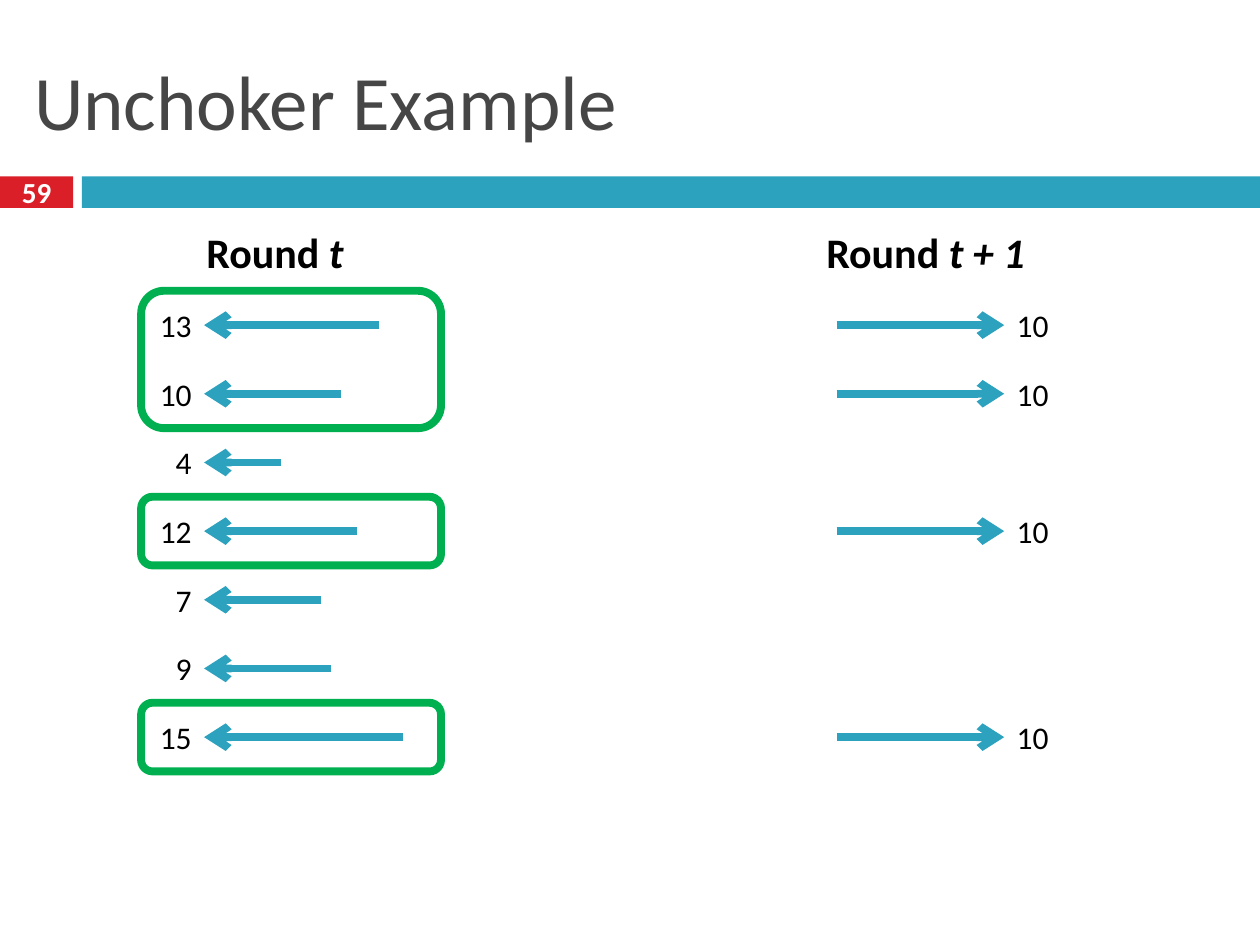
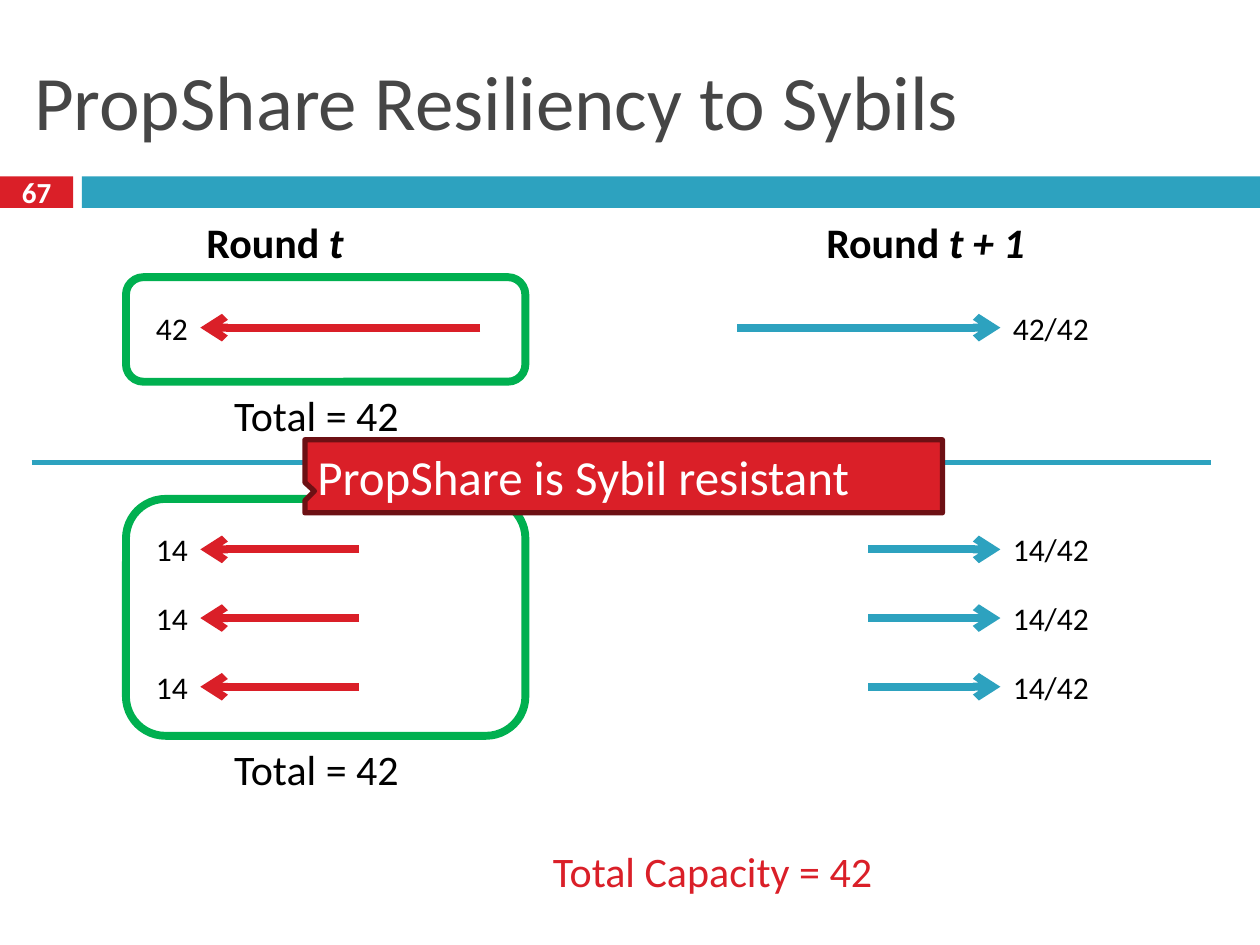
from typing import NamedTuple

from pptx import Presentation, util as u
from pptx.dml.color import RGBColor
from pptx.enum import shapes, text
from pptx.oxml.ns import qn
from lxml import etree

COLUMNS, ROWS = 100, 75
SLIDE_WIDTH, SLIDE_HEIGHT = u.Inches(10), u.Inches(7.5)
CELL = SLIDE_WIDTH // COLUMNS

TEAL = RGBColor(0x2D, 0xA2, 0xBF)
RED = RGBColor(0xDA, 0x1F, 0x28)
DARK_RED = RGBColor(0x6D, 0x10, 0x14)
GREEN = RGBColor(0x00, 0xB0, 0x50)
GREY = RGBColor(0x46, 0x46, 0x46)
BLACK = RGBColor(0, 0, 0)
WHITE = RGBColor(0xFF, 0xFF, 0xFF)

TITLE = dict(size=u.Pt(44), color=GREY)
NUMBER = dict(size=u.Pt(16.6), color=WHITE, bold=True)
HEADING = dict(size=u.Pt(24), color=BLACK, bold=True)
VARIABLE = dict(HEADING, italic=True)
SUM = dict(size=u.Pt(24), color=BLACK)
CAPACITY = dict(SUM, color=RED)
AMOUNT = dict(size=u.Pt(18), color=BLACK)
VERDICT = dict(size=u.Pt(28), color=WHITE)

PITCH = 5.45        # rows of the grid from one transfer to the next
TEXT_HEIGHT = {u.Pt(18): 4, u.Pt(24): 5}
LEFT, CENTER, RIGHT = text.PP_ALIGN.LEFT, text.PP_ALIGN.CENTER, text.PP_ALIGN.RIGHT


class Box(NamedTuple):
    """An area in columns and rows of the slide's grid."""
    left: float
    top: float
    width: float
    height: float

    @property
    def right(self):
        return self.left + self.width

    @property
    def bottom(self):
        return self.top + self.height

    def emu(self):
        return [round(side * CELL) for side in self]


def write(frame, runs, align=LEFT):
    """Fill a text frame with one paragraph of (words, style) runs."""
    paragraph = frame.paragraphs[0]
    paragraph.alignment = align
    for words, style in runs:
        run = paragraph.add_run()
        run.text = words
        run.font.name = "Calibri"
        for attribute, value in style.items():
            if attribute == "color":
                run.font.color.rgb = value
            else:
                setattr(run.font, attribute, value)


def add_label(slide, left, top, width, runs, align=LEFT):
    height = TEXT_HEIGHT[runs[0][1]["size"]]
    frame = slide.shapes.add_textbox(*Box(left, top, width, height).emu()).text_frame
    frame.word_wrap = False
    frame.auto_size = text.MSO_AUTO_SIZE.SHAPE_TO_FIT_TEXT
    write(frame, runs, align)


def add_block(slide, kind, box, fill=None, line=None, weight=4.5):
    block = slide.shapes.add_shape(kind, *box.emu())
    block.shadow.inherit = False
    if fill is None:
        block.fill.background()
    else:
        block.fill.solid()
        block.fill.fore_color.rgb = fill
    if line is None:
        block.line.fill.background()
    else:
        block.line.color.rgb = line
        block.line.width = u.Pt(weight)
    return block


def add_line(slide, start, end, y, color, weight=4.5, arrow=True):
    ends = [round(cells * CELL) for cells in (start, y, end, y)]
    line = slide.shapes.add_connector(shapes.MSO_CONNECTOR.STRAIGHT, *ends)
    line.line.color.rgb = color
    line.line.width = u.Pt(weight)
    if arrow:
        etree.SubElement(line.line._get_or_add_ln(), qn("a:tailEnd"), type="arrow")
    etree.SubElement(line._element.spPr, qn("a:effectLst"))


def add_transfer(slide, tip, length, y, amount, color):
    """Arrow ending at tip with its amount beyond; a negative length points left."""
    width = 2 + sum(0.7 if sign == "/" else 1.4 for sign in amount)
    add_line(slide, tip - length, tip, y, color)
    left, align = (tip, LEFT) if length > 0 else (tip - width, RIGHT)
    add_label(slide, left, y - 2, width, [(amount, AMOUNT)], align)


def add_frame(slide, box):
    add_block(slide, shapes.MSO_SHAPE.ROUNDED_RECTANGLE, box, line=GREEN)


def add_header(slide, title, number):
    heading = slide.shapes.title
    heading.left, heading.top, heading.width, heading.height = Box(1.7, 2.5, 96.7, 10.8).emu()
    heading.text_frame.vertical_anchor = text.MSO_ANCHOR.MIDDLE
    write(heading.text_frame, [(title, TITLE)])

    band = Box(0, 14, COLUMNS, 2.5)
    rectangle = shapes.MSO_SHAPE.RECTANGLE
    tab = add_block(slide, rectangle, band._replace(width=5.8), fill=RED)
    add_block(slide, rectangle, band._replace(left=6.5, width=93.5), fill=TEAL)
    frame = tab.text_frame
    frame.margin_top = frame.margin_bottom = 0
    frame.vertical_anchor = text.MSO_ANCHOR.MIDDLE
    write(frame, [(number, NUMBER)], CENTER)


def add_round_headings(slide, top):
    for left, width, variable in ((15.4, 14.7, "t"), (64.6, 20.4, "t + 1")):
        add_label(slide, left, top, width, [("Round ", HEADING), (variable, VARIABLE)])


def add_received(slide, box, rates, unchoked):
    """Rates of all peers, with frames round the (first row, rows) unchoked."""
    for row, (amount, length) in enumerate(rates):
        add_transfer(slide, box.left + 5, -length, box.top + (row + 0.5) * PITCH, amount, TEAL)
    for first, count in unchoked:
        add_frame(slide, box._replace(top=box.top + first * PITCH, height=count * PITCH))


def add_sent(slide, box, rows, amount):
    for row in rows:
        add_transfer(slide, box.right, box.width, box.top + (row + 0.5) * PITCH, amount, TEAL)


def add_peer_group(slide, box, peers, received, sent):
    """Equal peers in a frame, what they send back, and the sum below."""
    frame = box._replace(width=31.7)
    add_frame(slide, frame)
    add_label(slide, frame.left + 7.6, frame.bottom + 0.15, 16.7, [("Total = 42", SUM)])
    for peer in range(peers):
        y = box.top + 1.28 + (peer + 0.5) * PITCH
        for tip, (amount, length), color in ((box.left + 5.9, received, RED),
                                             (box.right, sent, TEAL)):
            add_transfer(slide, tip, length, y, amount, color)


def add_verdict(slide, box, words):
    callout = add_block(slide, shapes.MSO_SHAPE.RECTANGULAR_CALLOUT, box,
                        fill=RED, line=DARK_RED, weight=3)
    callout.adjustments[0], callout.adjustments[1] = -0.485, 0.203
    callout.text_frame.vertical_anchor = text.MSO_ANCHOR.MIDDLE
    write(callout.text_frame, [(words, VERDICT)])


def build_unchoker(slide):
    add_header(slide, "Unchoker Example", "59")
    add_round_headings(slide, 17.5)
    rates = [("13", 13.9), ("10", 10.9), ("4", 6.1), ("12", 12.1),
             ("7", 9.3), ("9", 10.1), ("15", 15.8)]
    peers = Box(11.2, 23.08, 23.8, len(rates) * PITCH)
    add_received(slide, peers, rates, unchoked=[(0, 2), (3, 1), (6, 1)])
    add_sent(slide, peers._replace(left=66.4, width=13.3), (0, 1, 3, 6), "10")


def build_propshare(slide):
    add_header(slide, "PropShare Resiliency to Sybils", "67")
    add_round_headings(slide, 16.7)
    add_peer_group(slide, Box(10, 22, 69.4, 8.3), 1, ("42", -22.2), ("42/42", 20.9))
    add_line(slide, 2.5, 96.1, 36.7, TEAL, weight=3, arrow=False)
    add_peer_group(slide, Box(10, 39.6, 69.4, 18.8), 3, ("14", -12.6), ("14/42", 10.5))
    add_label(slide, 42.9, 66.6, 30.7, [("Total Capacity = 42", CAPACITY)])
    add_verdict(slide, Box(24.2, 34.9, 50.6, 5.8), "PropShare is Sybil resistant")


def main():
    deck = Presentation()
    deck.slide_width, deck.slide_height = SLIDE_WIDTH, SLIDE_HEIGHT
    title_only = deck.slide_layouts[5]
    for build in (build_unchoker, build_propshare):
        build(deck.slides.add_slide(title_only))
    deck.save("out.pptx")


if __name__ == "__main__":
    main()
